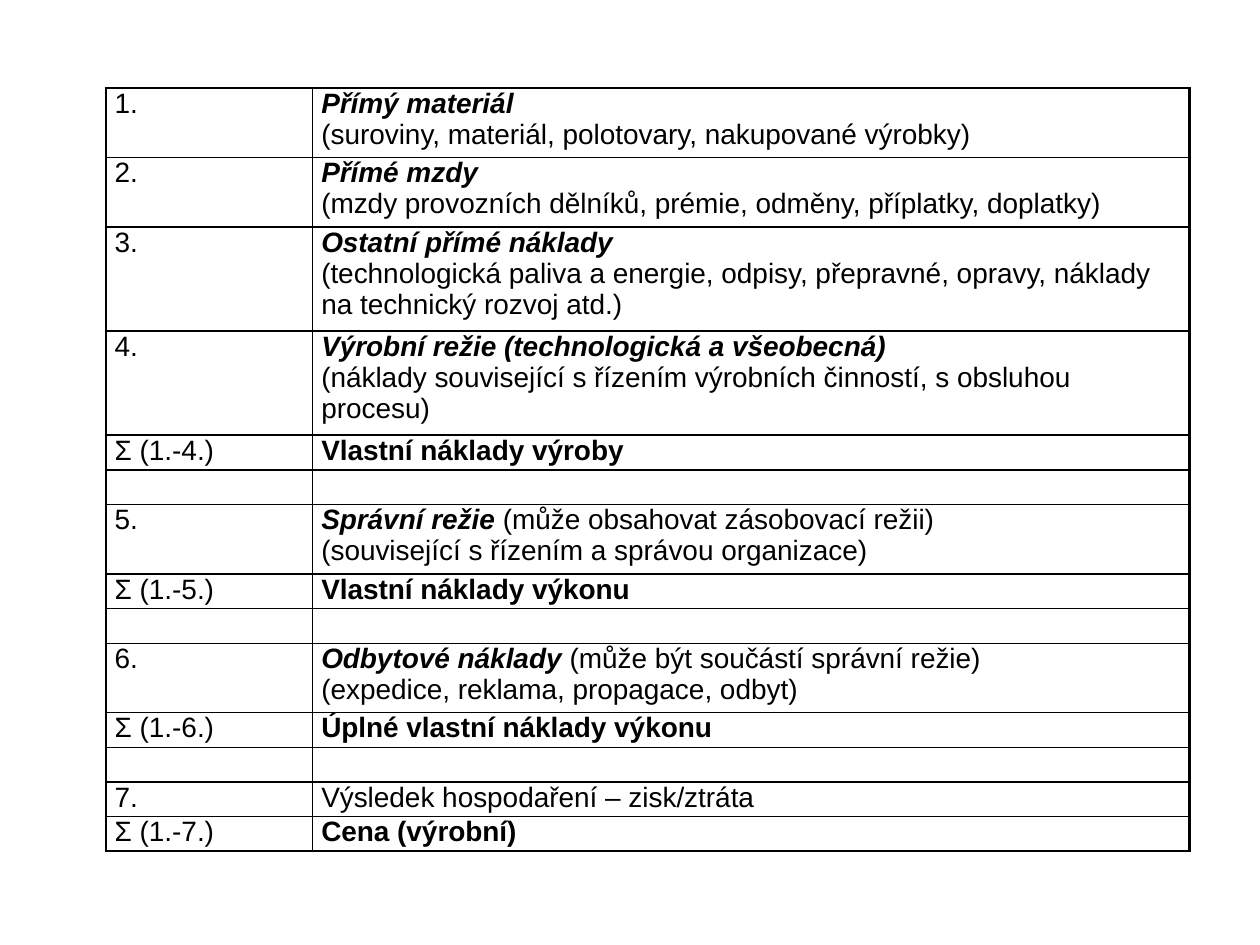
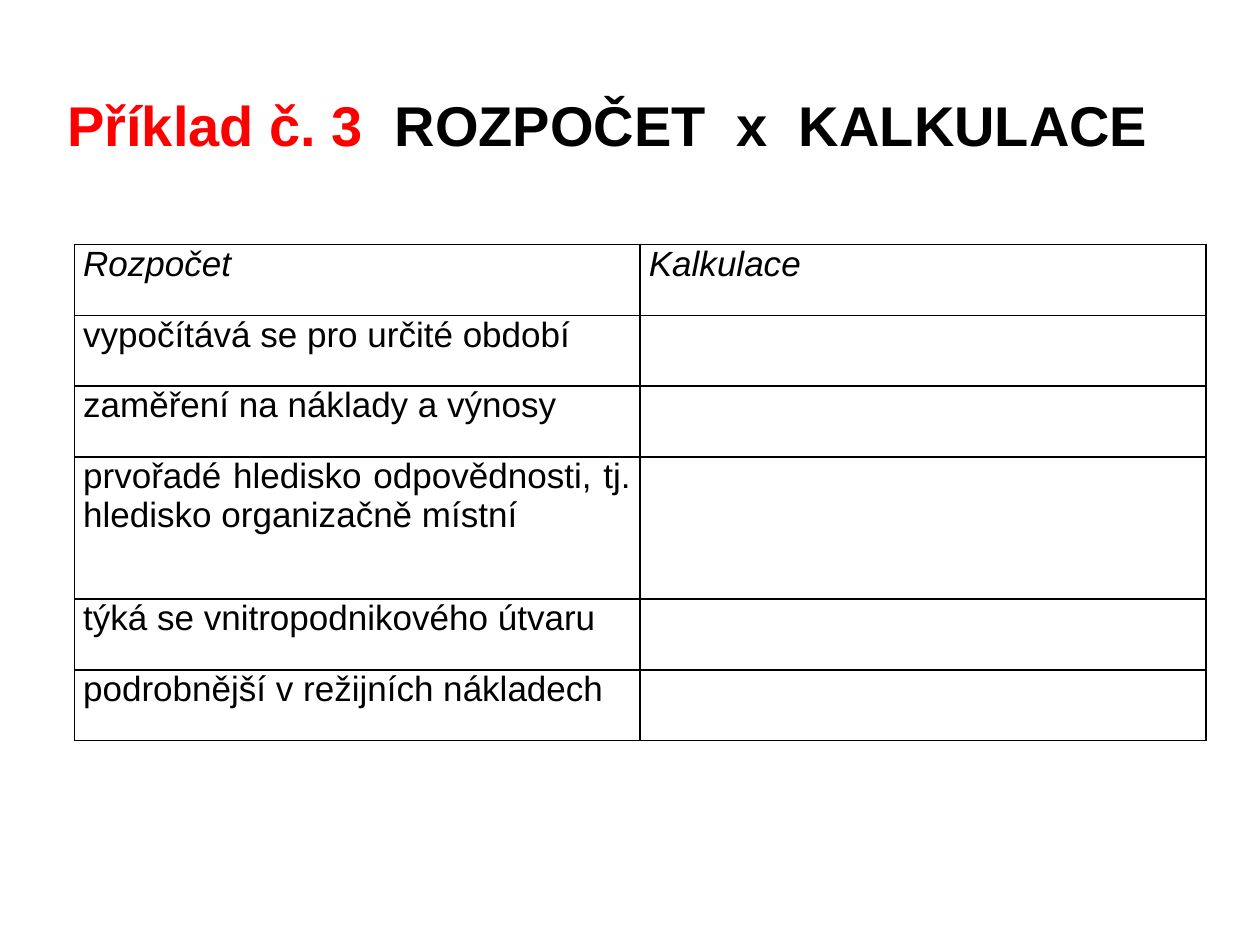
"""Build two slides: a costing formula table and a budget versus costing exercise."""
from dataclasses import dataclass

from lxml.etree import SubElement
from pptx import Presentation
from pptx.dml.color import RGBColor
from pptx.enum.text import MSO_ANCHOR, PP_ALIGN
from pptx.oxml.ns import qn
from pptx.util import Inches, Pt

BLACK = RGBColor(0x00, 0x00, 0x00)
RED = RGBColor(0xFF, 0x00, 0x00)
FONT = "Arial"
THIN = 1.0


@dataclass(frozen=True)
class Part:
    """A piece of text with its emphasis."""
    text: str
    bold: bool = False
    italic: bool = False


@dataclass(frozen=True)
class Row:
    """A table row: cells of paragraphs of parts, and a height in units."""
    cells: tuple
    units: int = 1


@dataclass(frozen=True)
class Grid:
    """Placement and style of a table."""
    left: float
    top: float
    widths: tuple
    height: float
    size: int
    outer: float = THIN
    align: PP_ALIGN = PP_ALIGN.LEFT


def cost_row(number: str, name: str, detail: str, units: int = 2, note: str = "") -> Row:
    """Return a numbered cost item with an explanation."""
    head = [Part(name, True, True)] + ([Part(" " + note)] if note else [])
    return Row(([[Part(number)]], [head, [Part(detail)]]), units)


def line_row(label: str = "", text: str = "", bold: bool = True) -> Row:
    """Return a row one line high, empty by default."""
    return Row(([[Part(label)]], [[Part(text, bold)]]))


def compare_row(budget: str, costing: str = "", italic: bool = False, units: int = 1) -> Row:
    """Return a row that sets budget against costing."""
    return Row(tuple([[Part(text, italic=italic)]] for text in (budget, costing)), units)


COST_GRID = Grid(0.84, 0.7, (1.64, 6.96), 6.06, 16, outer=1.5)
COST_ROWS = [
    cost_row("1.", "Přímý materiál", "(suroviny, materiál, polotovary, nakupované výrobky)"),
    cost_row("2.", "Přímé mzdy",
             "(mzdy provozních dělníků, prémie, odměny, příplatky, doplatky)"),
    cost_row("3.", "Ostatní přímé náklady",
             "(technologická paliva a energie, odpisy, přepravné, opravy, náklady "
             "na technický rozvoj atd.)", 3),
    cost_row("4.", "Výrobní režie (technologická a všeobecná)",
             "(náklady související s řízením výrobních činností, s obsluhou procesu)", 3),
    line_row("Σ (1.-4.)", "Vlastní náklady výroby"),
    line_row(),
    cost_row("5.", "Správní režie", "(související s řízením a správou organizace)",
             note="(může obsahovat zásobovací režii)"),
    line_row("Σ (1.-5.)", "Vlastní náklady výkonu"),
    line_row(),
    cost_row("6.", "Odbytové náklady", "(expedice, reklama, propagace, odbyt)",
             note="(může být součástí správní režie)"),
    line_row("Σ (1.-6.)", "Úplné vlastní náklady výkonu"),
    line_row(),
    line_row("7.", "Výsledek hospodaření – zisk/ztráta", bold=False),
    line_row("Σ (1.-7.)", "Cena (výrobní)"),
]

COMPARE_GRID = Grid(0.59, 1.94, (4.49, 4.49), 3.94, 20, align=PP_ALIGN.JUSTIFY)
COMPARE_ROWS = [
    compare_row("Rozpočet", "Kalkulace", italic=True),
    compare_row("vypočítává se pro určité období"),
    compare_row("zaměření na náklady a výnosy"),
    compare_row("prvořadé hledisko odpovědnosti, tj. hledisko organizačně místní", units=2),
    compare_row("týká se vnitropodnikového útvaru"),
    compare_row("podrobnější v režijních nákladech"),
]


def set_borders(cell, widths: dict) -> None:
    """Draw the four borders of a cell, with widths in points by side."""
    tcPr = cell._tc.get_or_add_tcPr()
    for side, width in widths.items():
        ln = SubElement(tcPr, qn(f"a:ln{side}"), w=str(int(Pt(width))))
        fill = SubElement(ln, qn("a:solidFill"))
        SubElement(fill, qn("a:srgbClr"), val=str(BLACK))


def fill_cell(cell, paragraphs: list, grid: Grid) -> None:
    """Write formatted paragraphs into a cell."""
    cell.margin_left = cell.margin_right = Inches(0.07)
    cell.margin_top = cell.margin_bottom = 0
    tf = cell.text_frame
    for i, parts in enumerate(paragraphs):
        p = tf.add_paragraph() if i else tf.paragraphs[0]
        p.alignment = grid.align
        p.font.name, p.font.size = FONT, Pt(grid.size)
        p.font.color.rgb = BLACK
        for part in parts:
            if part.text:
                r = p.add_run()
                r.text = part.text
                r.font.bold, r.font.italic = part.bold, part.italic
        if not p.runs:
            SubElement(p._p, qn("a:endParaRPr"), sz=str(grid.size * 100))


def add_grid(slide, grid: Grid, rows: list) -> None:
    """Add a bordered table whose row heights share the total by units."""
    last_row, last_col = len(rows) - 1, len(grid.widths) - 1
    table = slide.shapes.add_table(
        len(rows), len(grid.widths), Inches(grid.left), Inches(grid.top),
        Inches(sum(grid.widths)), Inches(grid.height)).table
    table.first_row = table.horz_banding = False
    for column, width in zip(table.columns, grid.widths):
        column.width = Inches(width)
    unit = grid.height / sum(row.units for row in rows)
    for i, row in enumerate(rows):
        table.rows[i].height = Inches(unit * row.units)
        for j, paragraphs in enumerate(row.cells):
            cell = table.cell(i, j)
            fill_cell(cell, paragraphs, grid)
            edges = {"L": j == 0, "R": j == last_col, "T": i == 0, "B": i == last_row}
            set_borders(cell, {side: grid.outer if edge else THIN
                               for side, edge in edges.items()})
            cell.fill.background()


def set_title(slide) -> None:
    """Place and format the exercise title."""
    sp = slide.shapes.title
    sp.left, sp.top, sp.width, sp.height = map(Inches, (0.22, 0.36, 9.21, 1.25))
    tf = sp.text_frame
    tf.vertical_anchor = MSO_ANCHOR.MIDDLE
    p = tf.paragraphs[0]
    p.alignment = PP_ALIGN.CENTER
    p.font.name, p.font.size, p.font.bold = FONT, Pt(32), True
    for text, color in (("Příklad č. 3  ", RED), ("ROZPOČET  x  KALKULACE", BLACK)):
        r = p.add_run()
        r.text = text
        r.font.color.rgb = color


def main() -> None:
    """Build and save the presentation."""
    prs = Presentation()
    prs.slide_width, prs.slide_height = Inches(10), Inches(7.5)
    title_only, blank = prs.slide_layouts[5], prs.slide_layouts[6]
    add_grid(prs.slides.add_slide(blank), COST_GRID, COST_ROWS)
    slide = prs.slides.add_slide(title_only)
    set_title(slide)
    add_grid(slide, COMPARE_GRID, COMPARE_ROWS)
    prs.save("out.pptx")


if __name__ == "__main__":
    main()
